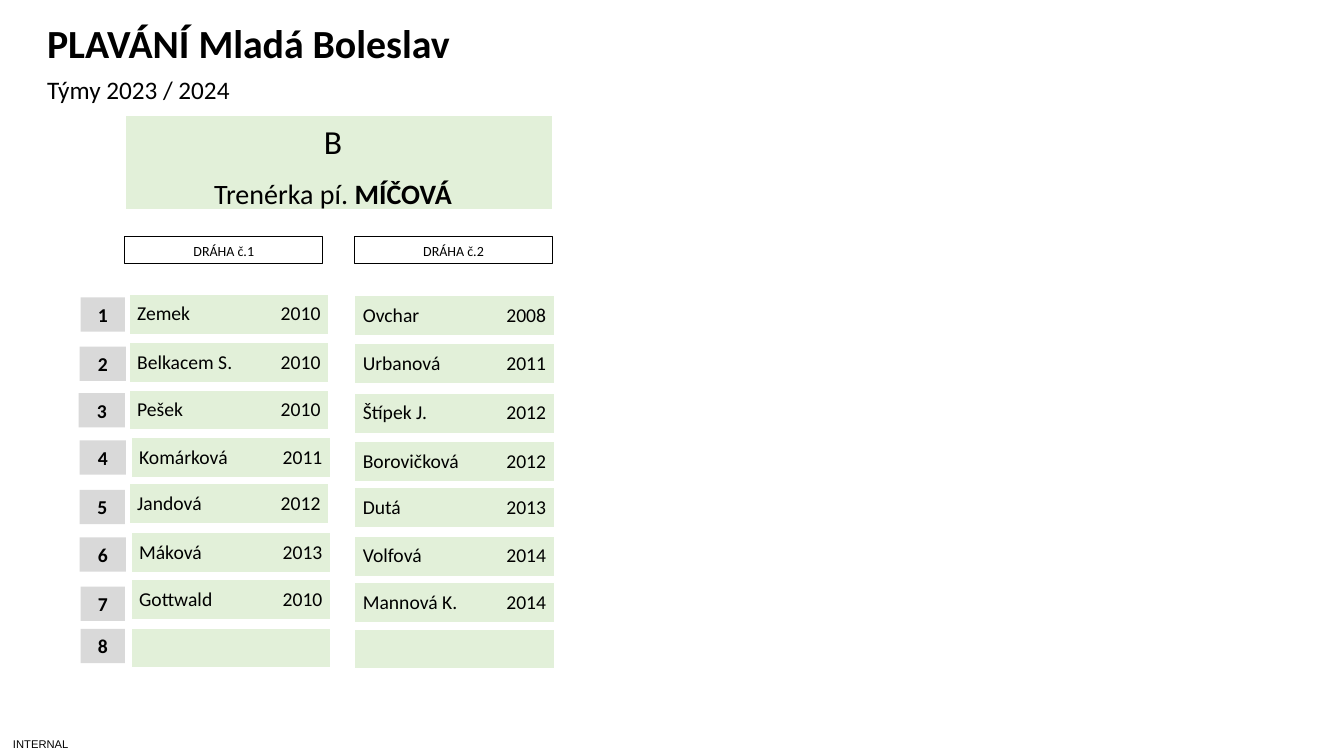
"""Build the swimming team slide with a coach header and two lanes of swimmers."""
from dataclasses import dataclass

from lxml.etree import SubElement
from pptx import Presentation
from pptx.dml.color import RGBColor
from pptx.enum.shapes import MSO_SHAPE as Shape
from pptx.enum.text import MSO_ANCHOR as Anchor, PP_ALIGN as Align
from pptx.oxml.ns import qn
from pptx.util import Pt

COLORS = {"text": "000000", "team": "E2F0D9", "badge": "D9D9D9", "border": "FFFFFF"}
BORDERS = {"a:lnL": 1, "a:lnR": 1, "a:lnT": 1, "a:lnB": 3}
ROW_WIDTH, ROW_HEIGHT = 142.6, 29.5
BADGE_HEIGHT = 24.5
YEAR_TAB = 131
LANE_TWO_LEFT = 253.4


@dataclass
class Box:
    left: float
    top: float
    width: float
    height: float

    def lengths(self) -> tuple:
        return Pt(self.left), Pt(self.top), Pt(self.width), Pt(self.height)


@dataclass
class Label:
    text: str
    box: Box
    size: float
    bold: bool = False
    font: str = "Calibri"
    anchor: Anchor = Anchor.MIDDLE
    align: Align = Align.LEFT
    inset: bool = True
    line_spacing: float = 1.0


@dataclass
class Swimmer:
    name: str
    year: str
    left: float
    top: float


@dataclass
class Badge:
    left: float
    top: float
    width: float


LABELS = [
    Label("INTERNAL", Box(0, 522.7, 58.3, 17.3), 8, font="Arial",
          align=Align.CENTER, inset=False),
    Label("Týmy 2023 / 2024", Box(26.6, 49.7, 787.7, 28.1), 18),
    Label("PLAVÁNÍ Mladá Boleslav", Box(26.6, 16.6, 787.7, 33.8), 28.5, bold=True,
          anchor=Anchor.BOTTOM, line_spacing=0.7),
]
COACH_BOX = Box(89.3, 82.1, 305.3, 68.4)
LANE_LEFTS = {"DRÁHA č.1": 89.3, "DRÁHA č.2": 253.4}
SWIMMERS = [
    Swimmer("Zemek", "2010", 92.2, 210.2),
    Swimmer("Belkacem S.", "2010", 92.2, 244.8),
    Swimmer("Pešek", "2010", 92.2, 278.6),
    Swimmer("Komárková", "2011", 93.6, 312.5),
    Swimmer("Jandová", "2012", 92.2, 345.6),
    Swimmer("Máková", "2013", 93.6, 380.2),
    Swimmer("Gottwald", "2010", 93.6, 414),
    Swimmer("", "", 93.6, 448.6),
    Swimmer("Ovchar", "2008", LANE_TWO_LEFT, 211),
    Swimmer("Urbanová", "2011", LANE_TWO_LEFT, 245.5),
    Swimmer("Štípek J.", "2012", LANE_TWO_LEFT, 280.8),
    Swimmer("Borovičková", "2012", LANE_TWO_LEFT, 315.4),
    Swimmer("Dutá", "2013", LANE_TWO_LEFT, 348.5),
    Swimmer("Volfová", "2014", LANE_TWO_LEFT, 383),
    Swimmer("Mannová K.", "2014", LANE_TWO_LEFT, 416.2),
    Swimmer("", "", LANE_TWO_LEFT, 449.3),
]
BADGES = [
    Badge(57.6, 212.4, 31.7), Badge(56.9, 247.7, 33.1),
    Badge(56.2, 280.8, 33.1), Badge(56.9, 314.6, 33.1),
    Badge(56.9, 349.9, 32.4), Badge(56.9, 383.8, 33.1),
    Badge(57.6, 419, 31.7), Badge(57.6, 449.3, 31.7),
]


def color(name: str) -> RGBColor:
    return RGBColor.from_string(COLORS[name])


def add_run(paragraph, text: str, size: float, bold: bool = False,
            font: str = "Calibri") -> None:
    run = paragraph.add_run()
    run.text = text
    run.font.name = font
    run.font.size = Pt(size)
    run.font.bold = bold
    run.font.color.rgb = color("text")


def add_label(slide, label: Label) -> None:
    frame = slide.shapes.add_textbox(*label.box.lengths()).text_frame
    frame.word_wrap = True
    frame.vertical_anchor = label.anchor
    if not label.inset:
        frame.margin_left = frame.margin_right = Pt(0)
        frame.margin_top = frame.margin_bottom = Pt(0)
    paragraph = frame.paragraphs[0]
    paragraph.alignment = label.align
    paragraph.line_spacing = label.line_spacing
    add_run(paragraph, label.text, label.size, label.bold, label.font)


def add_rectangle(slide, box: Box, text: str, size: float, fill: str = "",
                  bold: bool = False) -> None:
    shape = slide.shapes.add_shape(Shape.RECTANGLE, *box.lengths())
    shape.shadow.inherit = False
    if fill:
        shape.fill.solid()
        shape.fill.fore_color.rgb = color(fill)
        shape.line.fill.background()
    else:
        shape.fill.background()
        shape.line.color.rgb = color("text")
        shape.line.width = Pt(0.75)
    paragraph = shape.text_frame.paragraphs[0]
    paragraph.alignment = Align.CENTER
    add_run(paragraph, text, size, bold)


def add_team_cell(slide, box: Box):
    table = slide.shapes.add_table(1, 1, *box.lengths()).table
    table.first_row = table.horz_banding = False
    cell = table.cell(0, 0)
    cell.margin_left = cell.margin_top = Pt(5.76)
    cell.margin_right, cell.margin_bottom = Pt(2.88), Pt(0)
    properties = cell._tc.get_or_add_tcPr()
    for tag, width in BORDERS.items():
        border = SubElement(properties, qn(tag), w=str(Pt(width)))
        fill = SubElement(border, qn("a:solidFill"))
        SubElement(fill, qn("a:srgbClr"), val=COLORS["border"])
    cell.fill.solid()
    cell.fill.fore_color.rgb = color("team")
    return cell


def add_coach(slide) -> None:
    cell = add_team_cell(slide, COACH_BOX)
    cell.margin_right = Pt(14)
    team = cell.text_frame.paragraphs[0]
    coach = cell.text_frame.add_paragraph()
    team.alignment = coach.alignment = Align.CENTER
    coach.space_before = Pt(9.8)
    add_run(team, "B", 24)
    add_run(coach, "Trenérka pí. ", 20)
    add_run(coach, "MÍČOVÁ", 20, bold=True)


def add_swimmer(slide, swimmer: Swimmer) -> None:
    cell = add_team_cell(slide, Box(swimmer.left, swimmer.top, ROW_WIDTH, ROW_HEIGHT))
    if swimmer.name:
        paragraph = cell.text_frame.paragraphs[0]
        tabs = SubElement(paragraph._p.get_or_add_pPr(), qn("a:tabLst"))
        SubElement(tabs, qn("a:tab"), pos=str(Pt(YEAR_TAB)), algn="r")
        add_run(paragraph, f"{swimmer.name}\t{swimmer.year}", 14)


def main() -> None:
    presentation = Presentation()
    presentation.slide_width, presentation.slide_height = Pt(960), Pt(540)
    slide = presentation.slides.add_slide(presentation.slide_layouts[6])
    for label in LABELS:
        add_label(slide, label)
    add_coach(slide)
    for lane, left in LANE_LEFTS.items():
        add_rectangle(slide, Box(left, 169.2, 141.1, 19.4), lane, 10)
    for swimmer in SWIMMERS:
        add_swimmer(slide, swimmer)
    for number, badge in enumerate(BADGES, start=1):
        box = Box(badge.left, badge.top, badge.width, BADGE_HEIGHT)
        add_rectangle(slide, box, str(number), 14, "badge", bold=True)
    presentation.save("out.pptx")


if __name__ == "__main__":
    main()
